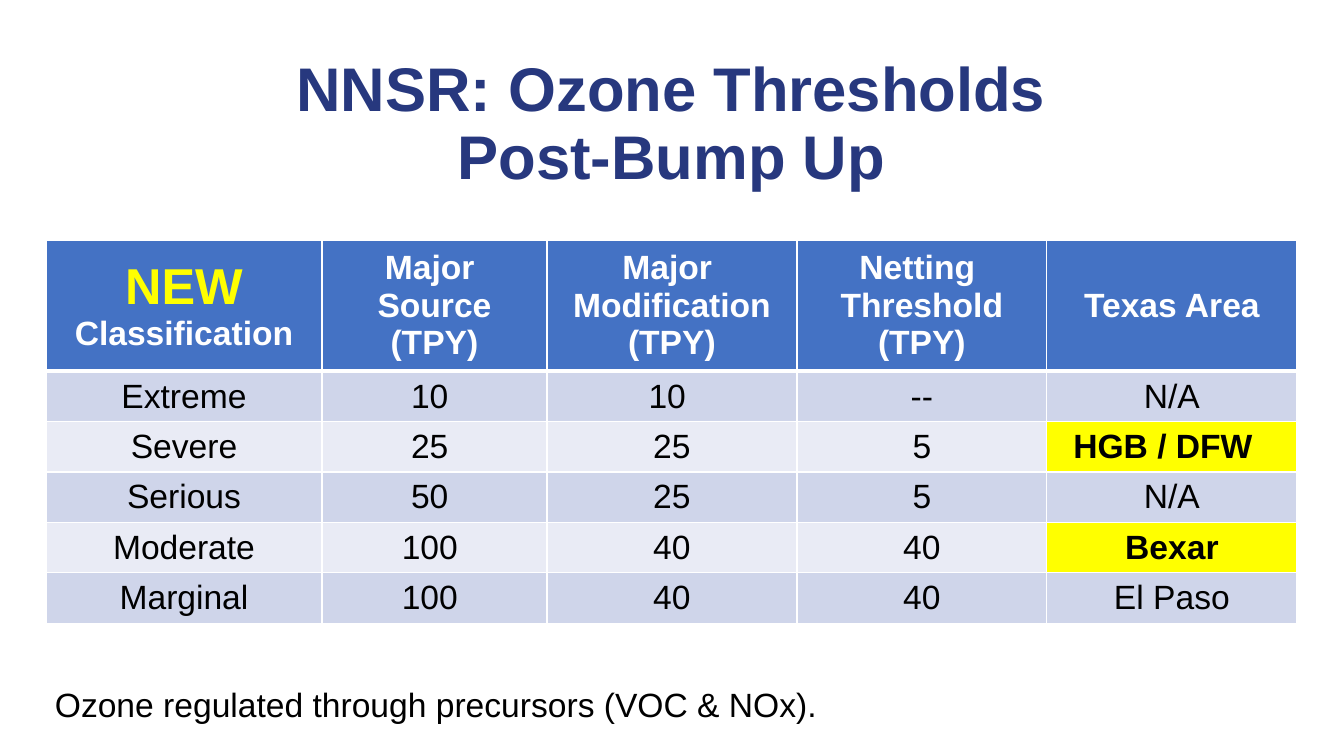
from lxml.etree import SubElement
from pptx import Presentation
from pptx.dml.color import RGBColor
from pptx.enum.text import MSO_ANCHOR as Anchor, PP_ALIGN as Align
from pptx.oxml.ns import qn
from pptx.util import Pt

COLORS = {
    "navy": "27387E", "header": "4472C4", "band_dark": "CFD5EA", "band_light": "E9EBF5",
    "yellow": "FFFF00", "white": "FFFFFF", "black": "000000",
}
HEADINGS = ["NEW\vClassification", "Major \nSource (TPY)", "Major \nModification (TPY)",
            "Netting \nThreshold (TPY)", "Texas Area"]
THRESHOLDS = [
    ["Extreme", "10 ", "10 ", "--", "N/A"],
    ["Severe", "25 ", "25", "5", "HGB / DFW"],
    ["Serious", "50 ", "25", "5", "N/A"],
    ["Moderate", "100 ", "40", "40", "Bexar"],
    ["Marginal", "100 ", "40", "40", "El Paso"],
]
HIGHLIGHTED = {"HGB / DFW", "Bexar"}
COLUMN_WIDTHS = [276, 225, 250, 250, 250]
HEADER_HEIGHT, ROW_HEIGHT = 121, 48


def px(value):
    return round(value * 914400 / 100.8)


class SlideBuilder:
    font_name = "Arial"

    def __init__(self, presentation):
        self.slide = presentation.slides.add_slide(presentation.slide_layouts[6])

    def style(self, font, size, color, bold=False):
        font.name, font.size, font.bold = self.font_name, Pt(size), bold
        font.color.rgb = RGBColor.from_string(COLORS[color])

    def format_text(self, text_frame, text, size, color, bold=False, align=Align.CENTER):
        text_frame.text = text
        for paragraph in text_frame.paragraphs:
            paragraph.alignment = align
            for run in paragraph.runs:
                self.style(run.font, size, color, bold)

    def text(self, box, text, size, color, anchor=Anchor.TOP, line_spacing=1.0, **format):
        text_frame = self.slide.shapes.add_textbox(*map(px, box)).text_frame
        text_frame.word_wrap = True
        text_frame.vertical_anchor = anchor
        self.format_text(text_frame, text, size, color, **format)
        for paragraph in text_frame.paragraphs:
            paragraph.line_spacing = line_spacing

    def border(self, cell, side, width):
        line = SubElement(cell._tc.get_or_add_tcPr(), qn(f"a:{side}"), w=str(Pt(width)))
        fill = SubElement(line, qn("a:solidFill"))
        SubElement(fill, qn("a:srgbClr"), val=COLORS["white"])

    def cell(self, cell, text, fill, color, bold, top=1, bottom=1):
        self.format_text(cell.text_frame, text, 24, color, bold)
        cell.vertical_anchor = Anchor.MIDDLE
        for side, width in zip(("lnL", "lnR", "lnT", "lnB"), (1, 1, top, bottom)):
            self.border(cell, side, width)
        cell.fill.solid()
        cell.fill.fore_color.rgb = RGBColor.from_string(COLORS[fill])

    def table(self, left, top, headings, rows):
        heights = [HEADER_HEIGHT] + [ROW_HEIGHT] * len(rows)
        box = (left, top, sum(COLUMN_WIDTHS), sum(heights))
        table = self.slide.shapes.add_table(len(heights), len(headings), *map(px, box)).table
        for column, width in zip(table.columns, COLUMN_WIDTHS):
            column.width = px(width)
        for row, height in zip(table.rows, heights):
            row.height = px(height)
        for column, heading in enumerate(headings):
            self.cell(table.cell(0, column), heading, "header", "white", True, bottom=3)
        for row, values in enumerate(rows, start=1):
            band = "band_dark" if row % 2 else "band_light"
            for column, value in enumerate(values):
                marked = value in HIGHLIGHTED
                self.cell(table.cell(row, column), value, "yellow" if marked else band,
                          "black", marked, top=3 if row == 1 else 1)
        return table


def main():
    presentation = Presentation()
    presentation.slide_width, presentation.slide_height = px(1344), px(756)
    builder = SlideBuilder(presentation)

    # Title
    builder.text((67, 52, 1209, 146), "NNSR: Ozone Thresholds\vPost-Bump Up", 44, "navy",
                 anchor=Anchor.MIDDLE, line_spacing=0.93, bold=True)

    # Threshold table, with a large "NEW" and the severe area set slightly left
    table = builder.table(46, 240, HEADINGS, THRESHOLDS)
    new_run = table.cell(0, 0).text_frame.paragraphs[0].runs[0]
    builder.style(new_run.font, 36, "yellow", True)
    table.cell(2, 4).margin_right = px(28)

    # Footnote
    builder.text((45, 679, 903, 50), "Ozone regulated through precursors (VOC & NOx).",
                 24, "black", align=Align.LEFT)

    presentation.save("out.pptx")


if __name__ == "__main__":
    main()
